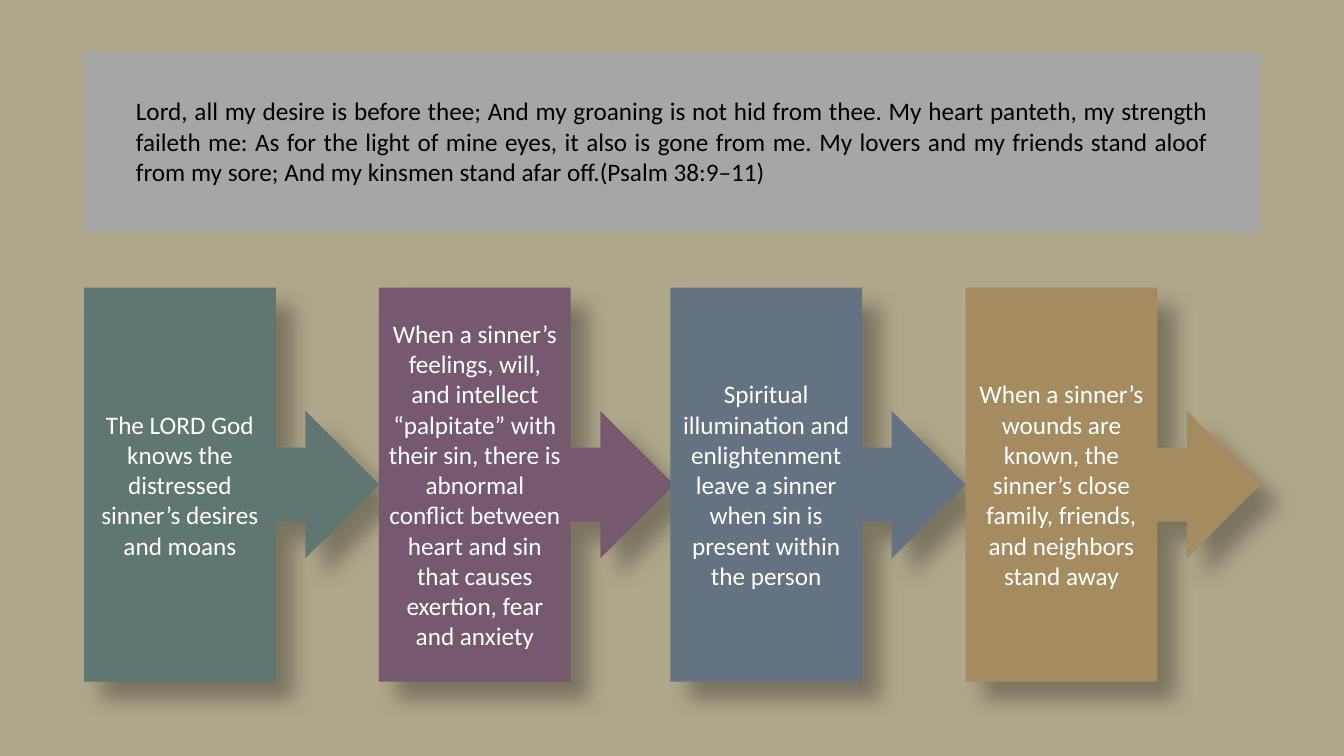
from dataclasses import dataclass

from lxml.etree import SubElement
from pptx import Presentation
from pptx.dml.color import RGBColor
from pptx.enum.shapes import MSO_SHAPE
from pptx.enum.text import MSO_ANCHOR, MSO_AUTO_SIZE, PP_ALIGN
from pptx.oxml.ns import qn
from pptx.shapes.autoshape import Shape
from pptx.slide import Slide
from pptx.util import Pt


@dataclass(frozen=True)
class Theme:
    font: str = "Calibri"
    size: float = 18
    back: str = "AFA78B"
    panel: str = "A6A6A6"
    dark: str = "000000"
    light: str = "FFFFFF"
    shade: str = "000000"


@dataclass(frozen=True)
class Box:
    left: float
    top: float
    width: float
    height: float


@dataclass(frozen=True)
class Step:
    left: float
    color: str
    text: str


THEME = Theme()
PANEL = Box(60, 37.4, 840, 128.2)
QUOTE = Box(90, 64.8, 780, 72.7)
STEP_TOP, STEP_WIDTH, STEP_HEIGHT = 205.4, 210.8, 281.6

VERSE = (
    "Lord, all my desire is before thee; And my groaning is not hid from thee. "
    "My heart panteth, my strength faileth me: As for the light of mine eyes, "
    "it also is gone from me. My lovers and my friends stand aloof from my sore; "
    "And my kinsmen stand afar off.(Psalm 38:9–11)"
)
STEPS = [
    Step(60, "607673", "The LORD God knows the distressed sinner’s desires and moans"),
    Step(270.7, "77596F",
         "When a sinner’s feelings, will, and intellect “palpitate” with their sin, "
         "there is abnormal conflict between heart and sin that causes exertion, "
         "fear and anxiety"),
    Step(478.8, "647281",
         "Spiritual illumination and enlightenment leave a sinner when sin is "
         "present within the person"),
    Step(689.7, "A48C60",
         "When a sinner’s wounds are known, the sinner’s close family, friends, "
         "and neighbors stand away"),
]


def place(box: Box) -> tuple[Pt, Pt, Pt, Pt]:
    return Pt(box.left), Pt(box.top), Pt(box.width), Pt(box.height)


def add_block(slide: Slide, kind: MSO_SHAPE, box: Box, color: str) -> Shape:
    shape = slide.shapes.add_shape(kind, *place(box))
    shape.shadow.inherit = False
    shape.fill.solid()
    shape.fill.fore_color.rgb = RGBColor.from_string(color)
    shape.line.fill.background()
    return shape


def write(shape: Shape, text: str, color: str, align: PP_ALIGN) -> None:
    frame = shape.text_frame
    frame.word_wrap = True
    para = frame.paragraphs[0]
    para.text = text
    para.alignment = align
    para.font.name = THEME.font
    para.font.size = Pt(THEME.size)
    para.font.color.rgb = RGBColor.from_string(color)


def add_shade(shape: Shape) -> None:
    effects = shape._element.spPr.find(qn("a:effectLst"))
    outer = SubElement(effects, qn("a:outerShdw"), {
        "blurRad": str(Pt(15)), "dist": str(Pt(18)), "dir": str(45 * 60000),
        "algn": "tl", "rotWithShape": "0",
    })
    color = SubElement(outer, qn("a:srgbClr"), val=THEME.shade)
    SubElement(color, qn("a:alpha"), val="30000")


def add_quote(slide: Slide) -> None:
    add_block(slide, MSO_SHAPE.RECTANGLE, PANEL, THEME.panel)
    quote = slide.shapes.add_textbox(*place(QUOTE))
    write(quote, VERSE, THEME.dark, PP_ALIGN.JUSTIFY)
    quote.text_frame.auto_size = MSO_AUTO_SIZE.SHAPE_TO_FIT_TEXT


def add_step(slide: Slide, step: Step) -> None:
    box = Box(step.left, STEP_TOP, STEP_WIDTH, STEP_HEIGHT)
    shape = add_block(slide, MSO_SHAPE.RIGHT_ARROW_CALLOUT, box, step.color)
    add_shade(shape)
    write(shape, step.text, THEME.light, PP_ALIGN.CENTER)
    shape.text_frame.vertical_anchor = MSO_ANCHOR.MIDDLE


def main() -> None:
    # Blank slide and background
    deck = Presentation()
    deck.slide_width, deck.slide_height = Pt(960), Pt(540)
    slide = deck.slides.add_slide(deck.slide_layouts[6])
    slide.background.fill.solid()
    slide.background.fill.fore_color.rgb = RGBColor.from_string(THEME.back)

    # Verse panel
    add_quote(slide)

    # Row of arrow callouts
    for step in STEPS:
        add_step(slide, step)

    deck.save("out.pptx")


if __name__ == "__main__":
    main()
